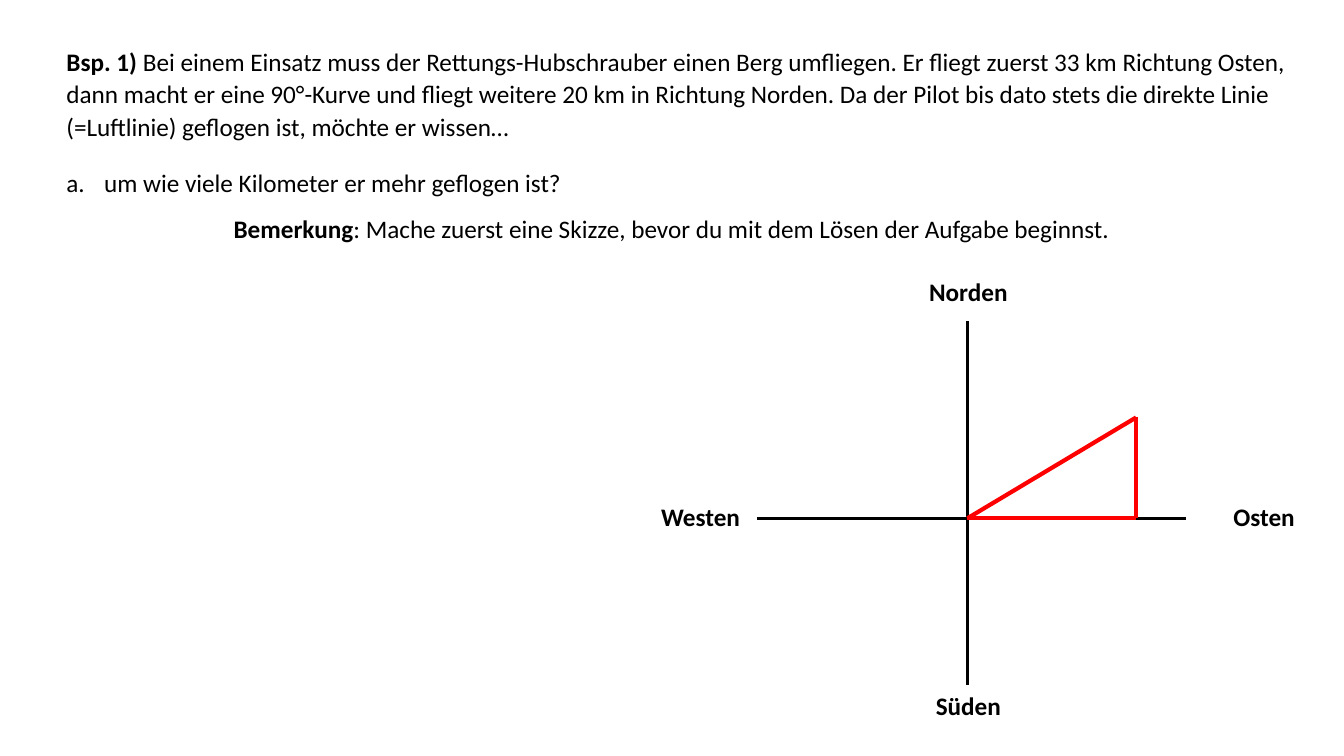
from dataclasses import dataclass

from lxml import etree
from pptx import Presentation
from pptx import util as u
from pptx.dml.color import RGBColor
from pptx.enum import shapes, text
from pptx.oxml import ns


@dataclass(frozen=True)
class Theme:
    font: str = "Calibri"
    size: u.Length = u.Pt(18)
    ink: RGBColor = RGBColor(0x00, 0x00, 0x00)
    route: RGBColor = RGBColor(0xFF, 0x00, 0x00)
    axis_width: u.Length = u.Pt(2.25)
    route_width: u.Length = u.Pt(3)


@dataclass(frozen=True)
class Point:
    x: float
    y: float


@dataclass(frozen=True)
class Segment:
    start: Point
    end: Point
    color: RGBColor
    width: u.Length


@dataclass(frozen=True)
class Caption:
    left: float
    top: float
    width: float
    lead: str
    rest: str = ""


THEME = Theme()
CAPTION_HEIGHT = 1.02
LABEL_WIDTH = 3.91

ORIGIN = Point(24.38, 13.06)
TURN = Point(28.63, ORIGIN.y)
TARGET = Point(TURN.x, 10.52)
NORTH, SOUTH = Point(ORIGIN.x, 8.1), Point(ORIGIN.x, 17.27)
WEST, EAST = Point(19.08, ORIGIN.y), Point(29.9, ORIGIN.y)

AXES = [Segment(start, end, THEME.ink, THEME.axis_width)
        for start, end in ((NORTH, SOUTH), (WEST, EAST))]
ROUTE = [Segment(start, end, THEME.route, THEME.route_width)
         for start, end in ((ORIGIN, TURN), (TURN, TARGET), (TARGET, ORIGIN))]

REMARK = Caption(4.34, 5.26, 25.17, "Bemerkung",
                 ": Mache zuerst eine Skizze, bevor du mit dem Lösen der Aufgabe beginnst.")
DIRECTIONS = [
    Caption(22.45, 6.83, LABEL_WIDTH, "Norden"),
    Caption(15.7, 12.52, LABEL_WIDTH, "Westen"),
    Caption(22.45, SOUTH.y, LABEL_WIDTH, "Süden"),
    Caption(EAST.x, 12.52, LABEL_WIDTH, "Osten"),
]

TASK_LEAD = "Bsp. 1)"
TASK = (" Bei einem Einsatz muss der Rettungs-Hubschrauber einen Berg umfliegen. "
        "Er fliegt zuerst 33 km Richtung Osten, dann macht er eine 90°-Kurve und "
        "fliegt weitere 20 km in Richtung Norden. Da der Pilot bis dato stets die "
        "direkte Linie (=Luftlinie) geflogen ist, möchte er wissen…")
QUESTION = "um wie viele Kilometer er mehr geflogen ist?"


def write(paragraph, lead: str, rest: str = "") -> None:
    for words, bold in ((lead, True), (rest, False)):
        if words:
            run = paragraph.add_run()
            run.text = words
            run.font.name = THEME.font
            run.font.size = THEME.size
            run.font.bold = bold
            run.font.color.rgb = THEME.ink


def set_marker(paragraph, indent: u.Length, numbering: str = "") -> None:
    properties = paragraph._p.get_or_add_pPr()
    properties.set("marL", str(indent))
    properties.set("indent", str(-indent))
    if numbering:
        etree.SubElement(properties, ns.qn("a:buFont"), typeface=THEME.font)
        etree.SubElement(properties, ns.qn("a:buAutoNum"), type=numbering)
    else:
        etree.SubElement(properties, ns.qn("a:buNone"))


def space(paragraph, line: float, after: float) -> None:
    paragraph.line_spacing = line
    paragraph.space_before = u.Pt(0)
    paragraph.space_after = u.Pt(after)


def fill_problem(body) -> None:
    body.left, body.top = u.Cm(1.42), u.Cm(0.99)
    body.width, body.height = u.Cm(31.24), u.Cm(4.04)
    frame = body.text_frame
    frame.word_wrap = True
    frame.auto_size = text.MSO_AUTO_SIZE.SHAPE_TO_FIT_TEXT

    task = frame.paragraphs[0]
    set_marker(task, u.Cm(0))
    space(task, 1.07, 8)
    write(task, TASK_LEAD, TASK)

    question = frame.add_paragraph()
    set_marker(question, u.Cm(0.95), "alphaLcPeriod")
    space(question, 1.5, 6)
    write(question, "", QUESTION)


def draw_caption(slide, caption: Caption) -> None:
    box = slide.shapes.add_textbox(u.Cm(caption.left), u.Cm(caption.top),
                                   u.Cm(caption.width), u.Cm(CAPTION_HEIGHT))
    frame = box.text_frame
    frame.word_wrap = True
    frame.auto_size = text.MSO_AUTO_SIZE.SHAPE_TO_FIT_TEXT
    frame.paragraphs[0].alignment = text.PP_ALIGN.CENTER
    write(frame.paragraphs[0], caption.lead, caption.rest)


def draw_segment(slide, segment: Segment) -> None:
    line = slide.shapes.add_connector(
        shapes.MSO_CONNECTOR.STRAIGHT,
        u.Cm(segment.start.x), u.Cm(segment.start.y),
        u.Cm(segment.end.x), u.Cm(segment.end.y))
    line.line.color.rgb = segment.color
    line.line.width = segment.width
    etree.SubElement(line._element.spPr, ns.qn("a:effectLst"))


def main() -> None:
    deck = Presentation()
    deck.slide_width, deck.slide_height = u.Cm(33.87), u.Cm(19.05)
    slide = deck.slides.add_slide(deck.slide_layouts[1])
    unused_title = slide.shapes.title._element
    unused_title.getparent().remove(unused_title)

    fill_problem(slide.placeholders[1])
    for caption in (REMARK, *DIRECTIONS):
        draw_caption(slide, caption)
    for segment in (*AXES, *ROUTE):
        draw_segment(slide, segment)
    deck.save("out.pptx")


if __name__ == "__main__":
    main()
